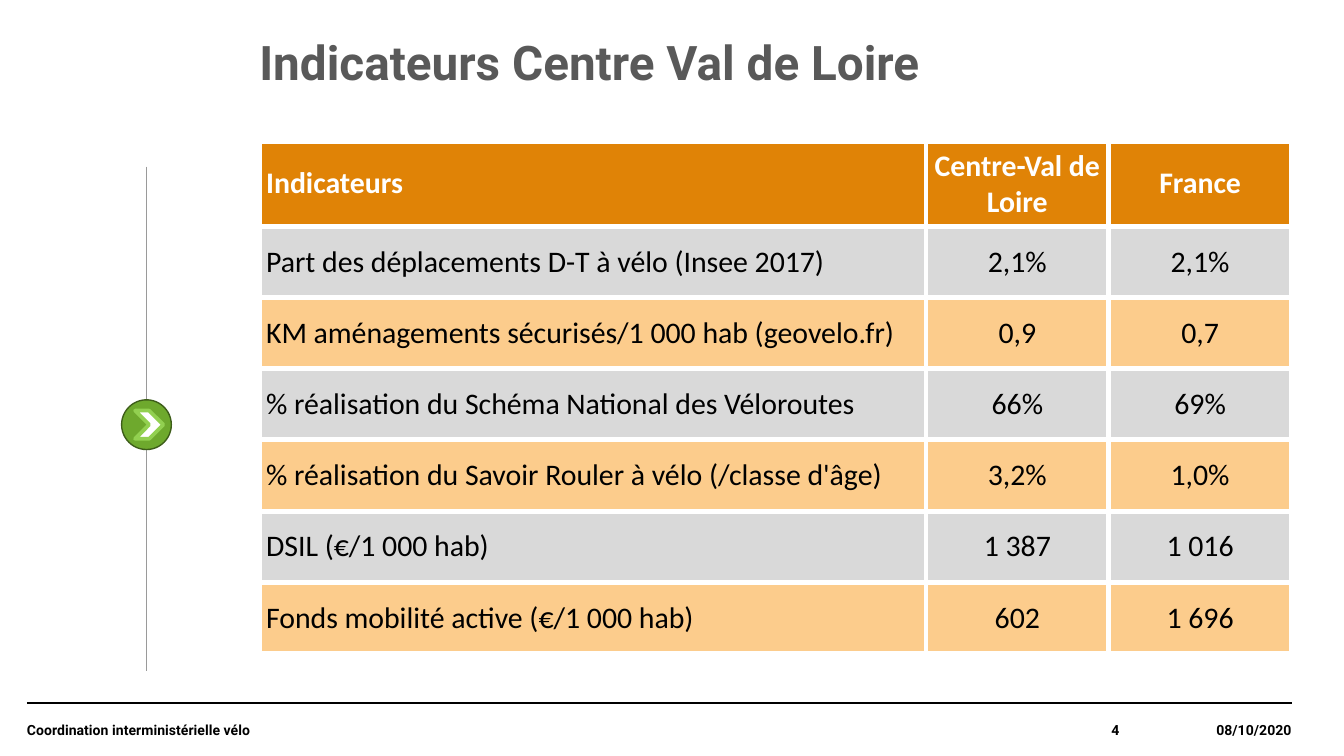
from lxml.etree import SubElement
from pptx import Presentation
from pptx.dml.color import RGBColor
from pptx.enum.shapes import MSO_CONNECTOR as Connector, MSO_SHAPE as Shape
from pptx.enum.text import MSO_ANCHOR as Anchor, MSO_AUTO_SIZE as AutoSize, PP_ALIGN as Align
from pptx.oxml.ns import qn
from pptx.util import Inches, Pt

WHITE = RGBColor(0xFF, 0xFF, 0xFF)
BLACK = RGBColor(0, 0, 0)
TITLE_GREY = RGBColor(0x59, 0x59, 0x59)
RULE_GREY = RGBColor(0x9A, 0x9A, 0x9A)
ROW_GREY = RGBColor(0xD9, 0xD9, 0xD9)
ORANGE = RGBColor(0xE0, 0x83, 0x06)
PALE_ORANGE = RGBColor(0xFC, 0xCC, 0x8C)
GREEN = RGBColor(0x6E, 0xA9, 0x2D)
DARK_GREEN = RGBColor(0x3D, 0x5D, 0x19)
LIGHT_GREEN = RGBColor(0x92, 0xD0, 0x50)

WIDTH = 10
HEIGHT = WIDTH * 9 / 16
LEFT, RIGHT = 0.2, 9.61
CONTENT_LEFT = 1.93
CONTENT_WIDTH = RIGHT - CONTENT_LEFT
RAIL_X = 1.09
FOOTER_TOP = 5.23
FOOTER_HEIGHT = HEIGHT - FOOTER_TOP
VALUE_WIDTH = 1.36
COLUMN_WIDTHS = (CONTENT_WIDTH - 2 * VALUE_WIDTH, VALUE_WIDTH, VALUE_WIDTH)
HEADER_HEIGHT, ROW_HEIGHT = 0.55, 0.53
TABLE_HEIGHT = 3.81

INDICATORS = [
    ("Indicateurs", "Centre-Val de Loire", "France"),
    ("Part des déplacements D-T à vélo (Insee 2017)", "2,1%", "2,1%"),
    ("KM aménagements sécurisés/1 000 hab (geovelo.fr)", "0,9", "0,7"),
    ("% réalisation du Schéma National des Véloroutes", "66%", "69%"),
    ("% réalisation du Savoir Rouler à vélo (/classe d'âge)", "3,2%", "1,0%"),
    ("DSIL (€/1 000 hab)", "1 387", "1 016"),
    ("Fonds mobilité active (€/1 000 hab)", "602", "1 696"),
]
# text, left, width, alignment
FOOTER = [
    ("08/10/2020", 8.33, 1.28, Align.RIGHT),
    ("Coordination interministérielle vélo", LEFT, 6.65, Align.LEFT),
    ("4", 6.85, 1.48, Align.RIGHT),
]


def write(frame, text, font_name, size, color, bold, align):
    paragraph = frame.paragraphs[0]
    paragraph.alignment = align
    run = paragraph.add_run()
    run.text = text
    font = run.font
    font.name, font.size, font.bold = font_name, Pt(size), bold
    font.color.rgb = color
    return paragraph


def set_margins(owner, inches):
    owner.margin_left = owner.margin_right = Inches(inches)
    owner.margin_top = owner.margin_bottom = Inches(inches)


def add_rule(slide, start, end, color, weight):
    rule = slide.shapes.add_connector(
        Connector.STRAIGHT, *(Inches(value) for value in (*start, *end)))
    rule.line.color.rgb = color
    rule.line.width = Pt(weight)
    SubElement(rule._element.spPr, qn("a:effectLst"))


def add_badge_part(slide, kind, center, size, fill, outline, weight):
    """Add a square-bounded preset shape around its center."""
    x, y = center
    part = slide.shapes.add_shape(
        kind, Inches(x - size / 2), Inches(y - size / 2), Inches(size), Inches(size))
    part.shadow.inherit = False
    part.fill.solid()
    part.fill.fore_color.rgb = fill
    part.line.color.rgb = outline
    part.line.width = Pt(weight)


def add_footer_text(slide, text, left, width, align):
    box = slide.shapes.add_textbox(
        Inches(left), Inches(FOOTER_TOP), Inches(width), Inches(FOOTER_HEIGHT))
    frame = box.text_frame
    frame.word_wrap = True
    frame.vertical_anchor = Anchor.MIDDLE
    set_margins(frame, 0)
    write(frame, text, "Roboto", 7.5, BLACK, True, align)


def fill_title(slide, text):
    title = slide.shapes.title
    title.left, title.top = Inches(CONTENT_LEFT), Inches(0.29)
    title.width, title.height = Inches(CONTENT_WIDTH), Inches(0.79)
    frame = title.text_frame
    frame.auto_size = AutoSize.NONE
    frame.word_wrap = True
    frame.vertical_anchor = Anchor.TOP
    set_margins(frame, 0)
    write(frame, text, "Roboto", 25.5, TITLE_GREY, True, Align.LEFT).line_spacing = 0.9


def add_cell_borders(cell, color, weight):
    """Border all four sides; the schema wants borders before the cell fill."""
    properties = cell._tc.get_or_add_tcPr()
    for side in ("lnL", "lnR", "lnT", "lnB"):
        border = SubElement(properties, qn(f"a:{side}"), w=str(Pt(weight)))
        solid = SubElement(border, qn("a:solidFill"))
        SubElement(solid, qn("a:srgbClr"), val=str(color))


def fill_cell(cell, text, row, column):
    header = row == 0
    add_cell_borders(cell, WHITE, 3)
    cell.fill.solid()
    cell.fill.fore_color.rgb = ORANGE if header else ROW_GREY if row % 2 else PALE_ORANGE
    cell.vertical_anchor = Anchor.MIDDLE
    set_margins(cell, 0.05)
    write(cell.text_frame, text, "Calibri", 16, WHITE if header else BLACK, header,
          Align.CENTER if column else Align.LEFT)


def add_indicator_table(slide):
    holder = slide.shapes.add_table(
        len(INDICATORS), len(COLUMN_WIDTHS), Inches(CONTENT_LEFT), Inches(1.05),
        Inches(CONTENT_WIDTH), Inches(TABLE_HEIGHT))
    table = holder.table
    for column, width in zip(table.columns, COLUMN_WIDTHS):
        column.width = Inches(width)
    for index, row in enumerate(table.rows):
        row.height = Inches(ROW_HEIGHT if index else HEADER_HEIGHT)
    # The two-line heading makes the table taller than its rows' minimum heights.
    holder.height = Inches(TABLE_HEIGHT)
    for row, texts in enumerate(INDICATORS):
        for column, text in enumerate(texts):
            fill_cell(table.cell(row, column), text, row, column)


def main():
    deck = Presentation()
    deck.slide_width, deck.slide_height = Inches(WIDTH), Inches(HEIGHT)
    slide = deck.slides.add_slide(deck.slide_layouts[5])

    add_rule(slide, (LEFT, FOOTER_TOP), (RIGHT, FOOTER_TOP), BLACK, 0.8)
    add_rule(slide, (RAIL_X, 1.24), (RAIL_X, 4.99), RULE_GREY, 0.75)
    add_badge_part(slide, Shape.OVAL, (RAIL_X, 3.16), 0.37, GREEN, DARK_GREEN, 0.75)
    add_badge_part(slide, Shape.CHEVRON, (RAIL_X + 0.02, 3.16), 0.21, WHITE, LIGHT_GREEN, 2)
    for entry in FOOTER:
        add_footer_text(slide, *entry)
    fill_title(slide, "Indicateurs Centre Val de Loire")
    add_indicator_table(slide)

    deck.save("out.pptx")


if __name__ == "__main__":
    main()
